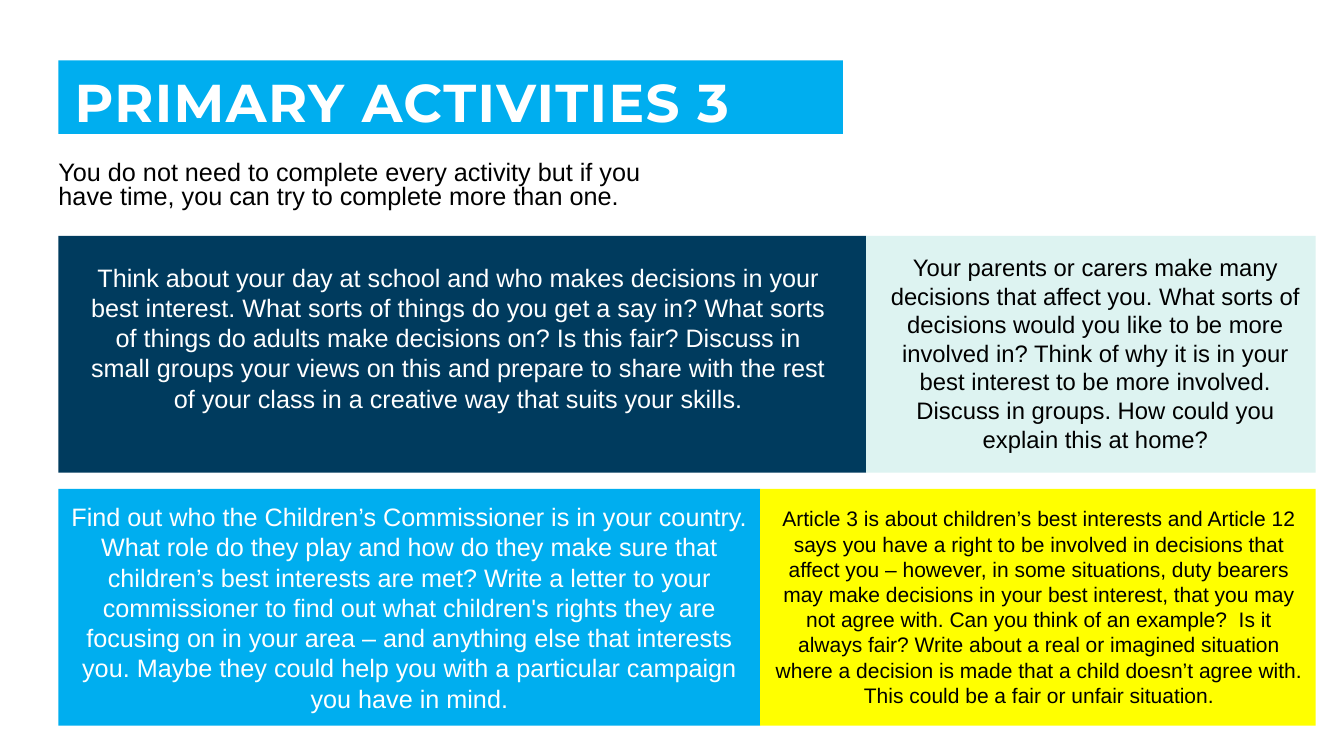
from pptx import Presentation
from pptx.dml.color import RGBColor
from pptx.enum.shapes import MSO_SHAPE
from pptx.enum.text import MSO_ANCHOR, PP_ALIGN
from pptx.util import Pt

PX = 9144  # 100 px to the inch
RECT = MSO_SHAPE.RECTANGLE
TOP, MIDDLE = MSO_ANCHOR.TOP, MSO_ANCHOR.MIDDLE
LEFT, CENTER = PP_ALIGN.LEFT, PP_ALIGN.CENTER

COLORS = {
    "white": "FFFFFF",
    "black": "000000",
    "sky": "00AEEF",
    "navy": "003B5E",
    "mint": "DDF3F1",
    "yellow": "FFFF00",
}

MARGIN, RIGHT = 58, 1305
ROW_TOP, ROW_HEIGHT, ROW_GAP = 234, 235, 16

# Each row: cards of (width, fill, text colour, size, text inset or None, text).
# The inset is (left, top, width, height) relative to the card.
ROWS = [
    [
        (801, "navy", "white", 18, (15, 21, 763, 162),
         "Think about your day at school and who makes decisions in your best "
         "interest. What sorts of things do you get a say in? What sorts of things "
         "do adults make decisions on? Is this fair? Discuss in small groups your "
         "views on this and prepare to share with the rest of your class in a "
         "creative way that suits your skills."),
        (446, "mint", "black", 17, (9, 12, 437, 210),
         "Your parents or carers make many decisions that affect you. What sorts "
         "of decisions would you like to be more involved in? Think of why it is "
         "in your best interest to be more involved. Discuss in groups. How could "
         "you explain this at home?"),
    ],
    [
        (696, "sky", "white", 18, None,
         "Find out who the Children’s Commissioner is in your country. What role "
         "do they play and how do they make sure that children’s best interests "
         "are met? Write a letter to your commissioner to find out what children's "
         "rights they are focusing on in your area – and anything else that "
         "interests you. Maybe they could help you with a particular campaign you "
         "have in mind."),
        (551, "yellow", "black", 15, (1, 12, 551, 212),
         "Article 3 is about children’s best interests and Article 12 says you "
         "have a right to be involved in decisions that affect you – however, in "
         "some situations, duty bearers may make decisions in your best interest, "
         "that you may not agree with. Can you think of an example?  Is it always "
         "fair? Write about a real or imagined situation where a decision is made "
         "that a child doesn’t agree with. This could be a fair or unfair "
         "situation."),
    ],
]


def rgb(name):
    return RGBColor.from_string(COLORS[name])


def add_block(slide, box, fill):
    s = slide.shapes.add_shape(RECT, *(v * PX for v in box))
    s.shadow.inherit = False
    s.fill.solid()
    s.fill.fore_color.rgb = rgb(fill)
    s.line.fill.background()
    return s


def add_text_box(slide, box):
    return slide.shapes.add_textbox(*(v * PX for v in box))


def write(sp, text, size, color, font="Arial", align=CENTER, anchor=TOP,
          margins=(10, 5, 10, 5), spacing=1.0):
    """Fill a shape with one paragraph and return the paragraph."""
    tf = sp.text_frame
    tf.word_wrap = True
    tf.vertical_anchor = anchor
    tf.margin_left, tf.margin_top, tf.margin_right, tf.margin_bottom = (
        m * PX for m in margins)
    p = tf.paragraphs[0]
    p.text = text
    p.alignment = align
    p.line_spacing = spacing
    p.font.name = font
    p.font.size = Pt(size)
    p.font.color.rgb = rgb(color)
    return p


def add_title(slide, box):
    p = write(add_block(slide, box, "sky"), "PRIMARY ACTIVITIES 3", 38, "white",
              "Montserrat", LEFT, MIDDLE, (16, 16, 12, 0), 0.9)
    p.font.bold = True
    p.runs[0].font._element.set("spc", "100")


def add_intro(slide, box):
    write(add_text_box(slide, box),
          "You do not need to complete every activity but if you have time, "
          "you can try to complete more than one.",
          18, "black", align=LEFT, margins=(0, 5, 10, 5), spacing=0.8)


def add_card(slide, box, fill, color, size, inset, text):
    sp = add_block(slide, box, fill)
    if inset:
        x, y, w, h = inset
        sp = add_text_box(slide, (box[0] + x, box[1] + y, w, h))
    write(sp, text, size, color, anchor=TOP if inset else MIDDLE)


def add_activities(slide, left, top):
    for i, row in enumerate(ROWS):
        x, y = left, top + i * (ROW_HEIGHT + ROW_GAP)
        for width, *card in row:
            add_card(slide, (x, y, width, ROW_HEIGHT), *card)
            x += width


def main():
    prs = Presentation()
    prs.slide_width, prs.slide_height = 1333 * PX, 750 * PX
    slide = prs.slides.add_slide(prs.slide_layouts[6])
    add_title(slide, (MARGIN, 60, 778, 73))
    add_intro(slide, (MARGIN, 156, 621, 62))
    add_activities(slide, MARGIN, ROW_TOP)
    prs.save("out.pptx")


if __name__ == "__main__":
    main()
